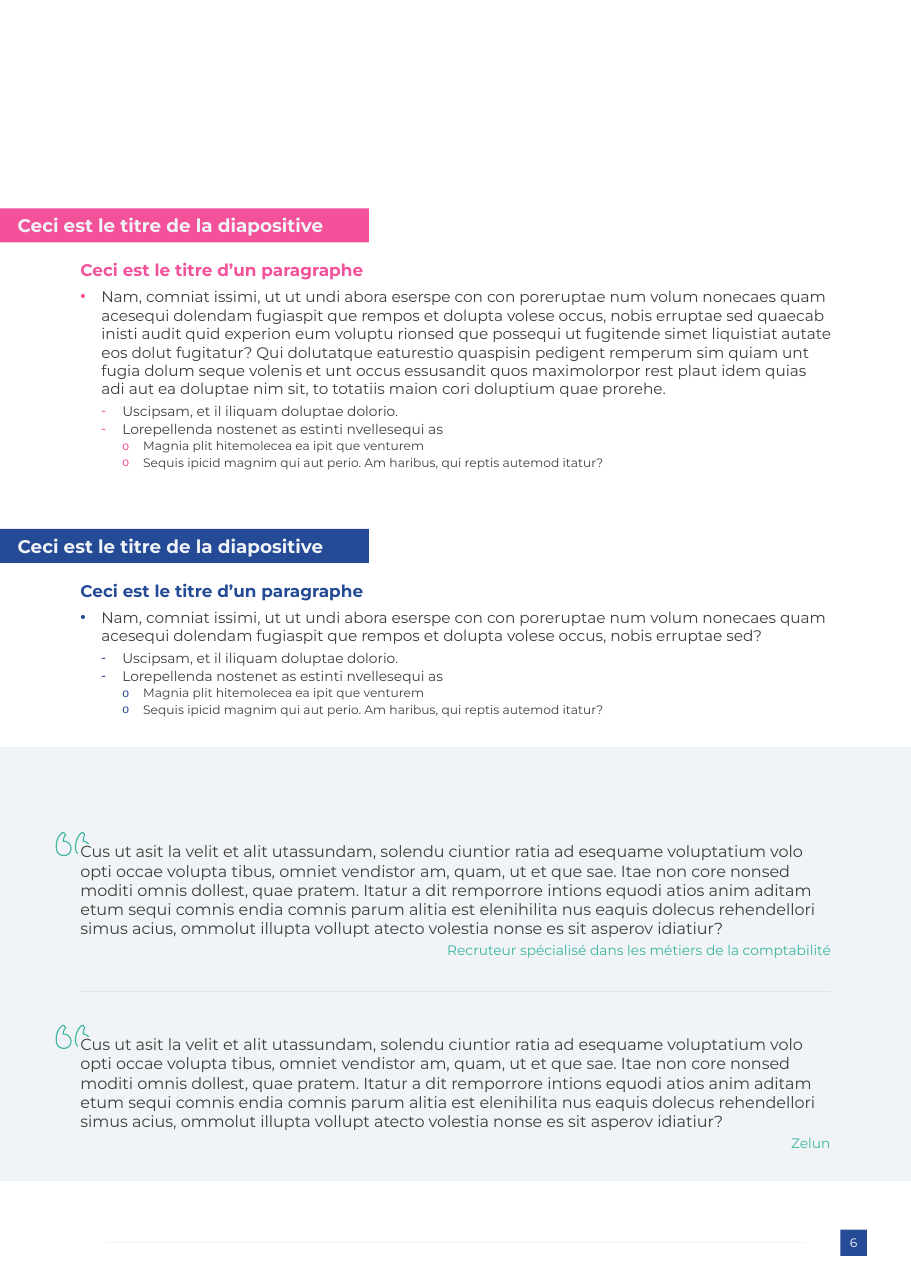
from lxml import etree
from pptx import Presentation
from pptx import util as u
from pptx.dml.color import RGBColor
from pptx.enum import shapes, text
from pptx.oxml.ns import qn

COLORS = {"pink": "F4519B", "blue": "254A96", "green": "3CB5A1", "pale": "F1F4F6",
          "ink": "3E3E3C", "rule": "E4E4E4", "white": "FFFFFF"}
RGB = {name: RGBColor.from_string(value) for name, value in COLORS.items()}
FONT = "Montserrat"
LEFT, WIDTH, INDENT = 0.73, 6.81, 0.19

prs = Presentation()
prs.slide_width, prs.slide_height = u.Inches(8.27), u.Inches(11.69)
s = prs.slides.add_slide(prs.slide_layouts.get_by_name("Comparison"))
ph = {p.placeholder_format.idx: p for p in s.placeholders}


def place(sp, x, y, w, h, fill=None, inset=0, anchor=text.MSO_ANCHOR.TOP):
    """Position a shape and set its fill and text frame."""
    sp.left, sp.top, sp.width, sp.height = (u.Inches(v) for v in (x, y, w, h))
    if fill:
        sp.fill.solid()
        sp.fill.fore_color.rgb = RGB[fill]
        sp.line.fill.background()
        sp.shadow.inherit = False
    tf = sp.text_frame
    tf.auto_size = text.MSO_AUTO_SIZE.NONE
    tf.word_wrap = True
    tf.vertical_anchor = anchor
    tf.margin_left = u.Inches(inset)
    tf.margin_top = tf.margin_right = tf.margin_bottom = 0
    return tf


def write(p, words, size, color, bold=False, align=text.PP_ALIGN.LEFT, after=0):
    """Add one formatted run to a paragraph."""
    p.alignment = align
    p.space_before, p.space_after = u.Pt(0), u.Pt(after)
    r = p.add_run()
    r.text = words
    r.font.name, r.font.size, r.font.bold = FONT, u.Pt(size), bold
    r.font.color.rgb = RGB[color]


# Titled sections with three-level lists
lead = ("Nam, comniat issimi, ut ut undi abora eserspe con con poreruptae num volum nonecaes quam "
        "acesequi dolendam fugiaspit que rempos et dolupta volese occus, nobis erruptae sed")
lead_end = (" quaecab inisti audit quid experion eum voluptu rionsed que possequi ut fugitende simet "
            "liquistiat autate eos dolut fugitatur? Qui dolutatque eaturestio quaspisin pedigent "
            "remperum sim quiam unt fugia dolum seque volenis et unt occus essusandit quos "
            "maximolorpor rest plaut idem quias adi aut ea doluptae nim sit, to totatiis maion "
            "cori doluptium quae prorehe.")
sub_items = [(1, "Uscipsam, et il iliquam doluptae dolorio."),
             (1, "Lorepellenda nostenet as estinti nvellesequi as"),
             (2, "Magnia plit hitemolecea ea ipit que venturem"),
             (2, "Sequis ipicid magnim qui aut perio. Am haribus, qui reptis autemod itatur?")]
levels = [("•", 10, 3), ("-", 9, 1), ("o", 8, 1)]  # bullet, size, space after
blue_banner = s.shapes.add_shape(shapes.MSO_SHAPE.RECTANGLE, 0, 0, 0, 0)
sections = [(1.89, "pink", ph[0], ph[1], ph[2], lead + lead_end, 1.93),
            (4.8, "blue", blue_banner, ph[3], ph[4], lead + "?", 0.99)]

for top, color, banner, heading, body, first_item, height in sections:
    tf = place(banner, 0, top, 3.35, 0.31, color, 0.16, text.MSO_ANCHOR.MIDDLE)
    write(tf.paragraphs[0], "Ceci est le titre de la diapositive", 12, "pale", True)

    tf = place(heading, LEFT, top + 0.46, WIDTH, 0.19, anchor=text.MSO_ANCHOR.BOTTOM)
    write(tf.paragraphs[0], "Ceci est le titre d’un paragraphe", 11, color, True)

    tf = place(body, LEFT, top + 0.72, WIDTH, height)
    for i, (level, words) in enumerate([(0, first_item)] + sub_items):
        p = tf.add_paragraph() if i else tf.paragraphs[0]
        p.level = level
        char, size, after = levels[level]
        pPr = p._p.get_or_add_pPr()
        pPr.set("marL", str(u.Inches(INDENT * (level + 1))))
        pPr.set("indent", str(-u.Inches(INDENT)))
        bullet_color = etree.SubElement(pPr, qn("a:buClr"))
        etree.SubElement(bullet_color, qn("a:srgbClr"), val=COLORS[color])
        etree.SubElement(pPr, qn("a:buFont"), typeface="Arial")
        etree.SubElement(pPr, qn("a:buChar"), char=char)
        write(p, words, size, "ink", after=after)

# Quotes panel
panel = s.shapes.add_shape(shapes.MSO_SHAPE.RECTANGLE, 0, 0, 0, 0)
place(panel, 0, 6.78, 8.27, 3.94, "pale")

quote = ("Cus ut asit la velit et alit utassundam, solendu ciuntior ratia ad esequame voluptatium volo "
         "opti occae volupta tibus, omniet vendistor am, quam, ut et que sae. Itae non core nonsed "
         "moditi omnis dollest, quae pratem. Itatur a dit remporrore intions equodi atios anim aditam "
         "etum sequi comnis endia comnis parum alitia est elenihilita nus eaquis dolecus rehendellori "
         "simus acius, ommolut illupta vollupt atecto volestia nonse es sit asperov idiatiur?")
# Quote mark strokes: start, then cubic curves, in thousandths of an inch
marks = [
    [(75, 85), (75, 75), (75, 55), (95, 30), (95, 20), (85, 10), (72, 5),
     (40, 25), (5, 75), (12, 150), (12, 185), (40, 215), (80, 215),
     (120, 215), (145, 185), (145, 150), (145, 115), (115, 85), (75, 85)],
    [(208, 195), (195, 185), (185, 170), (185, 150), (185, 75), (215, 25), (245, 5),
     (255, 5), (265, 20), (268, 30), (255, 55), (255, 75), (255, 85),
     (270, 85), (290, 95), (305, 110)],
]
STEPS = 8

for top, author in [(7.55, "Recruteur spécialisé dans les métiers de la comptabilité"), (9.3, "Zelun")]:
    for i, curve in enumerate(marks):
        points = []
        for k in range(0, len(curve) - 1, 3):
            for step in range(1, STEPS + 1):
                t = step / STEPS
                weights = ((1 - t) ** 3, 3 * t * (1 - t) ** 2, 3 * t * t * (1 - t), t ** 3)
                points.append(tuple(sum(w * pt[axis] for w, pt in zip(weights, curve[k:k + 4]))
                                    for axis in (0, 1)))
        builder = s.shapes.build_freeform(*curve[0], scale=u.Inches(1) / 1000)
        builder.add_line_segments(points, close=i == 0)
        sp = builder.convert_to_shape(u.Inches(0.5), u.Inches(top))
        sp.fill.background()
        sp.line.color.rgb, sp.line.width = RGB["green"], u.Pt(0.75)
        sp.shadow.inherit = False

    tf = place(s.shapes.add_textbox(0, 0, 0, 0), LEFT, top + 0.09, WIDTH, 0.88)
    write(tf.paragraphs[0], quote, 10.5, "ink")
    tf = place(s.shapes.add_textbox(0, 0, 0, 0), LEFT, top + 1, WIDTH, 0.15)
    write(tf.paragraphs[0], author, 9, "green", align=text.PP_ALIGN.RIGHT)

# Divider and footer rule
for x1, x2, y, color in [(LEFT, LEFT + WIDTH, 9, "rule"), (0.96, 7.31, 11.28, "pale")]:
    line = s.shapes.add_connector(shapes.MSO_CONNECTOR.STRAIGHT,
                                  u.Inches(x1), u.Inches(y), u.Inches(x2), u.Inches(y))
    line.line.color.rgb, line.line.width = RGB[color], u.Pt(0.5)
    etree.SubElement(line._element.spPr, qn("a:effectLst"))

# Page number
page = s.shapes.add_shape(shapes.MSO_SHAPE.RECTANGLE, 0, 0, 0, 0)
tf = place(page, 7.63, 11.16, 0.24, 0.24, "blue", anchor=text.MSO_ANCHOR.MIDDLE)
write(tf.paragraphs[0], "6", 8, "white", align=text.PP_ALIGN.CENTER)

prs.save("out.pptx")
